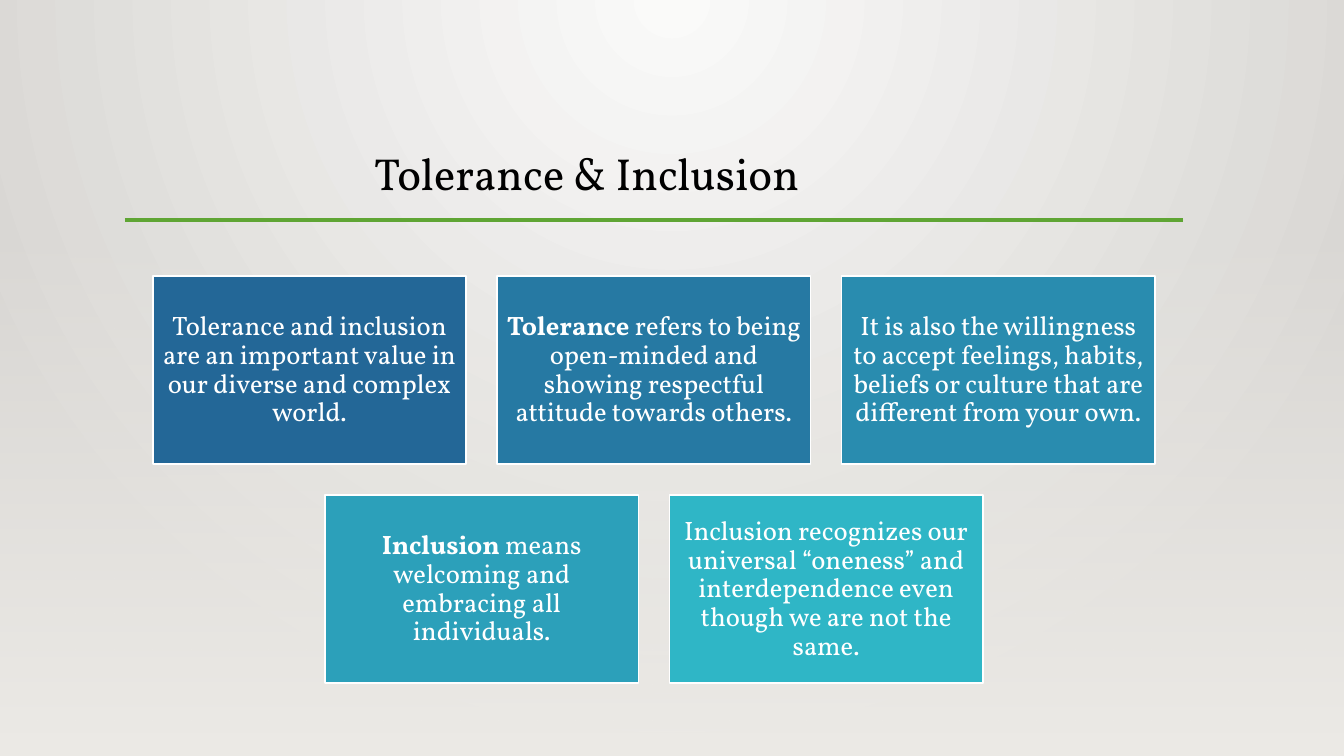
from pptx import Presentation
from pptx.dml.color import RGBColor
from pptx.enum.shapes import MSO_CONNECTOR as Connector, MSO_SHAPE as Shape
from pptx.enum.text import MSO_ANCHOR as Anchor, PP_ALIGN as Align
from pptx.oxml import parse_xml
from pptx.oxml.ns import nsdecls
from pptx.util import Cm, Pt

WIDTH, HEIGHT = 33.87, 19.05
FONT = "Vollkorn"

# Card grid, in centimetres: each row is centred on the same axis
CARD_WIDTH, CARD_HEIGHT, GAP = 7.9, 4.74, 0.78
GRID_CENTRE, GRID_TOP = 16.48, 6.96

# Each card is a fill colour, a bold lead and the remaining text
CARD_ROWS = [
    [
        ("236797", "", "Tolerance and inclusion are an important value in "
                       "our diverse and complex world."),
        ("2679A3", "Tolerance", " refers to being open-minded and showing "
                                "respectful attitude towards others."),
        ("298CAF", "", "It is also the willingness to accept feelings, habits, "
                       "beliefs or culture that are different from your own."),
    ],
    [
        ("2CA0BA", "Inclusion", " means welcoming and embracing all individuals."),
        ("2FB6C6", "", "Inclusion recognizes our universal “oneness” and "
                       "interdependence even though we are not the same."),
    ],
]


def colour(value):
    return RGBColor.from_string(value)


def add_span(para, text, size, value, bold=False):
    span = para.add_run()
    span.text = text
    span.font.name = FONT
    span.font.size = Pt(size)
    span.font.bold = bold
    span.font.color.rgb = colour(value)


def set_gradient(fill, start, end):
    fill.gradient()
    for stop, value in zip(fill.gradient_stops, (start, end)):
        stop.color.rgb = colour(value)


def set_background(page):
    set_gradient(page.background.fill, "FAFAF9", "D7D5D2")
    # Radiate from the middle of the top edge
    linear = page.element.xpath(".//p:bg//a:lin")[0]
    radial = parse_xml(
        f'<a:path {nsdecls("a")} path="circle">'
        '<a:fillToRect l="43000" t="0" r="43000" b="100000"/></a:path>')
    linear.getparent().replace(linear, radial)


def add_floor(page, top):
    box = page.shapes.add_shape(
        Shape.RECTANGLE, 0, Cm(top), Cm(WIDTH), Cm(HEIGHT - top))
    box.shadow.inherit = False
    box.line.fill.background()
    set_gradient(box.fill, "EDEBE7", "EDEBE7")
    box.fill.gradient_angle = 270
    # The first stop is fully transparent
    first = box.element.xpath(".//a:gs/a:srgbClr")[0]
    first.append(parse_xml(f'<a:alpha {nsdecls("a")} val="0"/>'))


def set_title(page, text):
    title = page.shapes.title
    title.left, title.top = Cm(4.27), Cm(2.24)
    title.width, title.height = Cm(26.44), Cm(2.92)
    frame = title.text_frame
    frame.word_wrap = True
    frame.vertical_anchor = Anchor.BOTTOM
    frame.margin_left = Cm(5.16)
    para = frame.paragraphs[0]
    para.alignment = Align.LEFT
    para.line_spacing = 0.9
    add_span(para, text, 32, "000000")


def add_rule(page, left, right, top):
    rule = page.shapes.add_connector(
        Connector.STRAIGHT, Cm(left), Cm(top), Cm(right), Cm(top))
    rule.line.color.rgb = colour("5FA534")
    rule.line.width = Pt(2.5)
    rule.element.spPr.append(parse_xml(f'<a:effectLst {nsdecls("a")}/>'))


def add_card(page, left, top, fill, lead, text):
    box = page.shapes.add_shape(
        Shape.RECTANGLE, Cm(left), Cm(top), Cm(CARD_WIDTH), Cm(CARD_HEIGHT))
    box.shadow.inherit = False
    box.fill.solid()
    box.fill.fore_color.rgb = colour(fill)
    box.line.color.rgb = colour("FFFFFF")
    box.line.width = Pt(1.25)
    frame = box.text_frame
    frame.word_wrap = True
    frame.vertical_anchor = Anchor.MIDDLE
    frame.margin_left = frame.margin_right = Cm(0.2)
    frame.margin_top = frame.margin_bottom = Cm(0.2)
    para = frame.paragraphs[0]
    para.alignment = Align.CENTER
    para.line_spacing = 0.9
    if lead:
        add_span(para, lead, 19, "FFFFFF", bold=True)
    add_span(para, text, 19, "FFFFFF")


def add_cards(page):
    for row, cards in enumerate(CARD_ROWS):
        row_width = len(cards) * (CARD_WIDTH + GAP) - GAP
        top = GRID_TOP + row * (CARD_HEIGHT + GAP)
        for column, card in enumerate(cards):
            left = GRID_CENTRE - row_width / 2 + column * (CARD_WIDTH + GAP)
            add_card(page, left, top, *card)


def main():
    deck = Presentation()
    deck.slide_width, deck.slide_height = Cm(WIDTH), Cm(HEIGHT)
    page = deck.slides.add_slide(deck.slide_layouts[5])

    # Backdrop
    set_background(page)
    add_floor(page, 5.61)

    # Heading
    set_title(page, "Tolerance & Inclusion")
    add_rule(page, 3.15, 29.82, 5.54)

    # Statements
    add_cards(page)
    deck.save("out.pptx")


if __name__ == "__main__":
    main()
